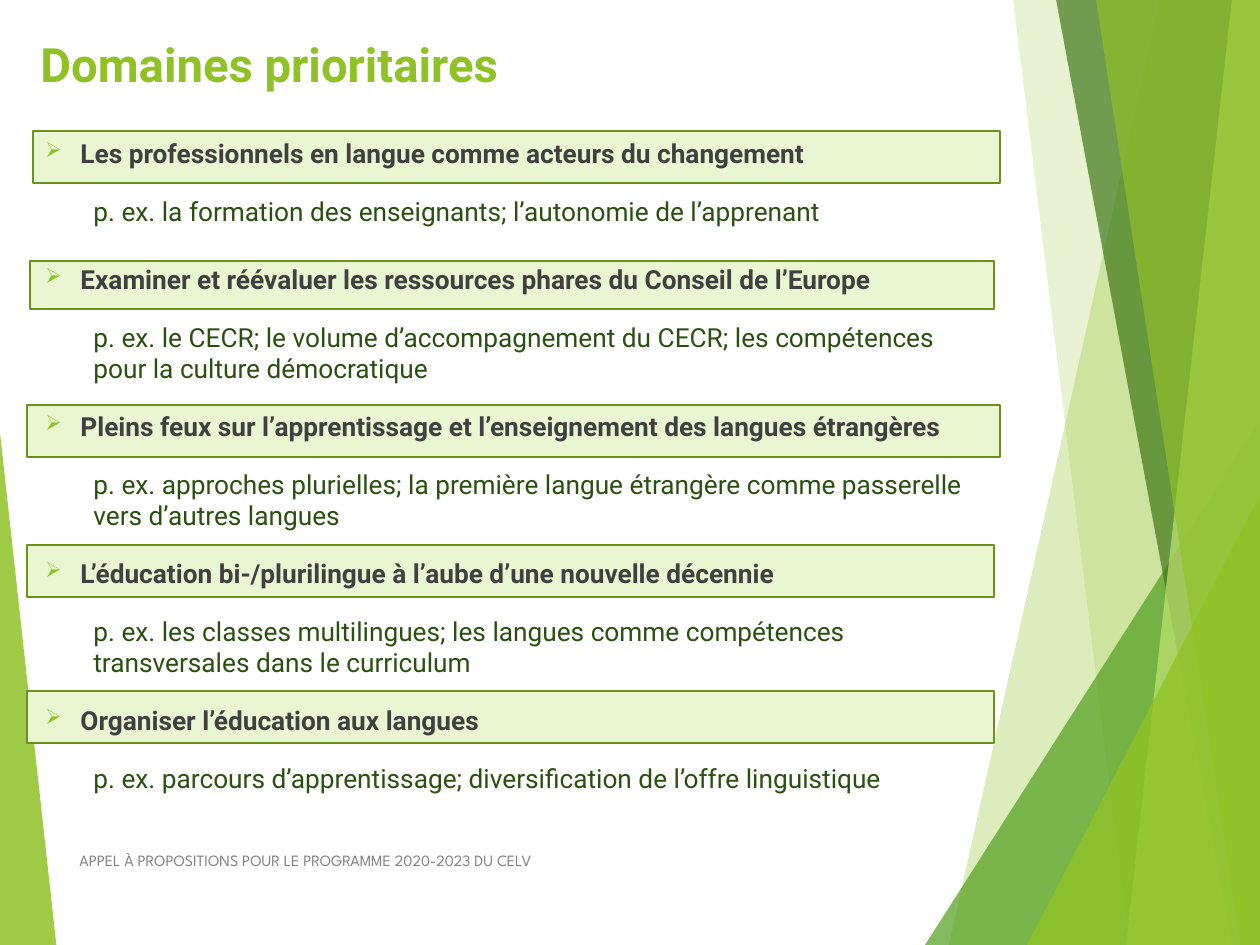
from lxml.etree import SubElement
from pptx import Presentation
from pptx.dml.color import RGBColor
from pptx.enum.shapes import MSO_SHAPE
from pptx.enum.text import MSO_ANCHOR, PP_ALIGN
from pptx.oxml.ns import qn
from pptx.util import Emu, Pt

LIME = RGBColor(0x90, 0xC2, 0x26)
PALE_LIME = RGBColor(0xC0, 0xE4, 0x74)
LEAF = RGBColor(0x54, 0xA0, 0x21)
FOREST = RGBColor(0x3F, 0x78, 0x19)
BAND_FILL = RGBColor(0xEA, 0xF6, 0xD1)
BAND_LINE = RGBColor(0x6B, 0x90, 0x1C)
HEADING = RGBColor(0x40, 0x40, 0x40)
EXAMPLE = RGBColor(0x2A, 0x50, 0x10)
GREY = RGBColor(0x80, 0x80, 0x80)

WIDTH, HEIGHT = 1260, 945
SCALE = 914400 / 126

TITLE = "Domaines prioritaires"
FOOTER = "APPEL À PROPOSITIONS POUR LE PROGRAMME 2020-2023 DU CELV"

# Heading, example, band (left, top, width, height)
PRIORITIES = [
    ("Les professionnels en langue comme acteurs du changement",
     "p. ex. la formation des enseignants; l’autonomie de l’apprenant",
     (33, 131, 967, 52)),
    ("Examiner et réévaluer les ressources phares du Conseil de l’Europe",
     "p. ex. le CECR; le volume d’accompagnement du CECR; les compétences "
     "pour la culture démocratique",
     (30, 261, 964, 48)),
    ("Pleins feux sur l’apprentissage et l’enseignement des langues étrangères",
     "p. ex. approches plurielles; la première langue étrangère comme passerelle "
     "vers d’autres langues",
     (27, 405, 973, 52)),
    ("L’éducation bi-/plurilingue à l’aube d’une nouvelle décennie",
     "p. ex. les classes multilingues; les langues comme compétences "
     "transversales dans le curriculum",
     (27, 545, 967, 52)),
    ("Organiser l’éducation aux langues",
     "p. ex. parcours d’apprentissage; diversification de l’offre linguistique",
     (27, 691, 967, 52)),
]

# Blades run to the right edge: (top x, bottom x), colour, opacity
# Triangles: (left, top, width, height), apex position, colour, opacity
FACETS = [
    ("blade", (1160, 949), LIME, 30),
    ("blade", (1013, 1129), LIME, 20),
    ("triangle", (925, 420, 335, 525), 1, LEAF, 72),
    ("blade", (1056, 1232), FOREST, 70),
    ("blade", (1232, 1126), PALE_LIME, 70),
    ("blade", (1096, 1241), LIME, 65),
    ("triangle", (1027, 495, 233, 450), 1, LIME, 80),
    ("triangle", (0, 433, 58, 527), 0, LIME, 85),
]


def px(value):
    return Emu(round(value * SCALE))


def add_facet(page, kind, geometry, *style):
    *apex, colour, opacity = style
    if kind == "blade":
        top_x, bottom_x = geometry
        builder = page.shapes.build_freeform(top_x, -1, scale=SCALE)
        builder.add_line_segments(
            [(WIDTH, -1), (WIDTH, HEIGHT), (bottom_x, HEIGHT)], close=True)
        facet = builder.convert_to_shape()
    else:
        facet = page.shapes.add_shape(
            MSO_SHAPE.ISOSCELES_TRIANGLE, *map(px, geometry))
        facet.adjustments[0] = apex[0]
    facet.shadow.inherit = False
    facet.line.fill.background()
    facet.fill.solid()
    facet.fill.fore_color.rgb = colour
    shade = facet.fill._xPr.find(qn("a:solidFill"))[0]
    SubElement(shade, qn("a:alpha"), val=str(opacity * 1000))


def add_band(page, geometry):
    band = page.shapes.add_shape(MSO_SHAPE.RECTANGLE, *map(px, geometry))
    band.shadow.inherit = False
    band.fill.solid()
    band.fill.fore_color.rgb = BAND_FILL
    band.line.color.rgb = BAND_LINE
    band.line.width = Pt(1.5)


def add_text_frame(page, *geometry):
    frame = page.shapes.add_textbox(*map(px, geometry)).text_frame
    frame.word_wrap = True
    frame.vertical_anchor = MSO_ANCHOR.TOP
    return frame


def add_span(para, text, size, colour, bold=False, font="Roboto"):
    para.alignment = PP_ALIGN.LEFT
    span = para.add_run()
    span.text = text
    span.font.name = font
    span.font.size = Pt(size)
    span.font.bold = bold
    span.font.color.rgb = colour


def set_indent(para, margin, hanging=0):
    properties = para._p.get_or_add_pPr()
    properties.set("marL", str(px(margin)))
    properties.set("indent", str(-px(hanging)))
    return properties


def add_arrow_bullet(para):
    properties = set_indent(para, 35, 35)
    colour = SubElement(properties, qn("a:buClr"))
    SubElement(colour, qn("a:srgbClr"), val=str(LIME))
    SubElement(properties, qn("a:buSzPct"), val="80000")
    SubElement(properties, qn("a:buChar"), char="➢")


def add_priorities(page):
    frame = add_text_frame(page, 33, 131, 967, 707)
    for index, (heading, example, _) in enumerate(PRIORITIES):
        para = frame.add_paragraph() if index else frame.paragraphs[0]
        add_arrow_bullet(para)
        if index:
            para.space_before = Pt(15)
        add_span(para, heading, 15, HEADING, bold=True)

        para = frame.add_paragraph()
        set_indent(para, 48)
        para.space_before = Pt(15)
        para.space_after = Pt(0 if index else 6)
        add_span(para, example, 15, EXAMPLE)


def main():
    deck = Presentation()
    deck.slide_width, deck.slide_height = px(WIDTH), px(HEIGHT)
    page = deck.slides.add_slide(deck.slide_layouts[6])

    for facet in FACETS:
        add_facet(page, *facet)
    footer = add_text_frame(page, 67, 845, 525, 50)
    add_span(footer.paragraphs[0], FOOTER, 9, GREY, font="League Spartan")
    for _, _, geometry in PRIORITIES:
        add_band(page, geometry)
    title = add_text_frame(page, 28, 29, 888, 101)
    add_span(title.paragraphs[0], TITLE, 27, LIME, bold=True)
    add_priorities(page)

    deck.save("out.pptx")


if __name__ == "__main__":
    main()
